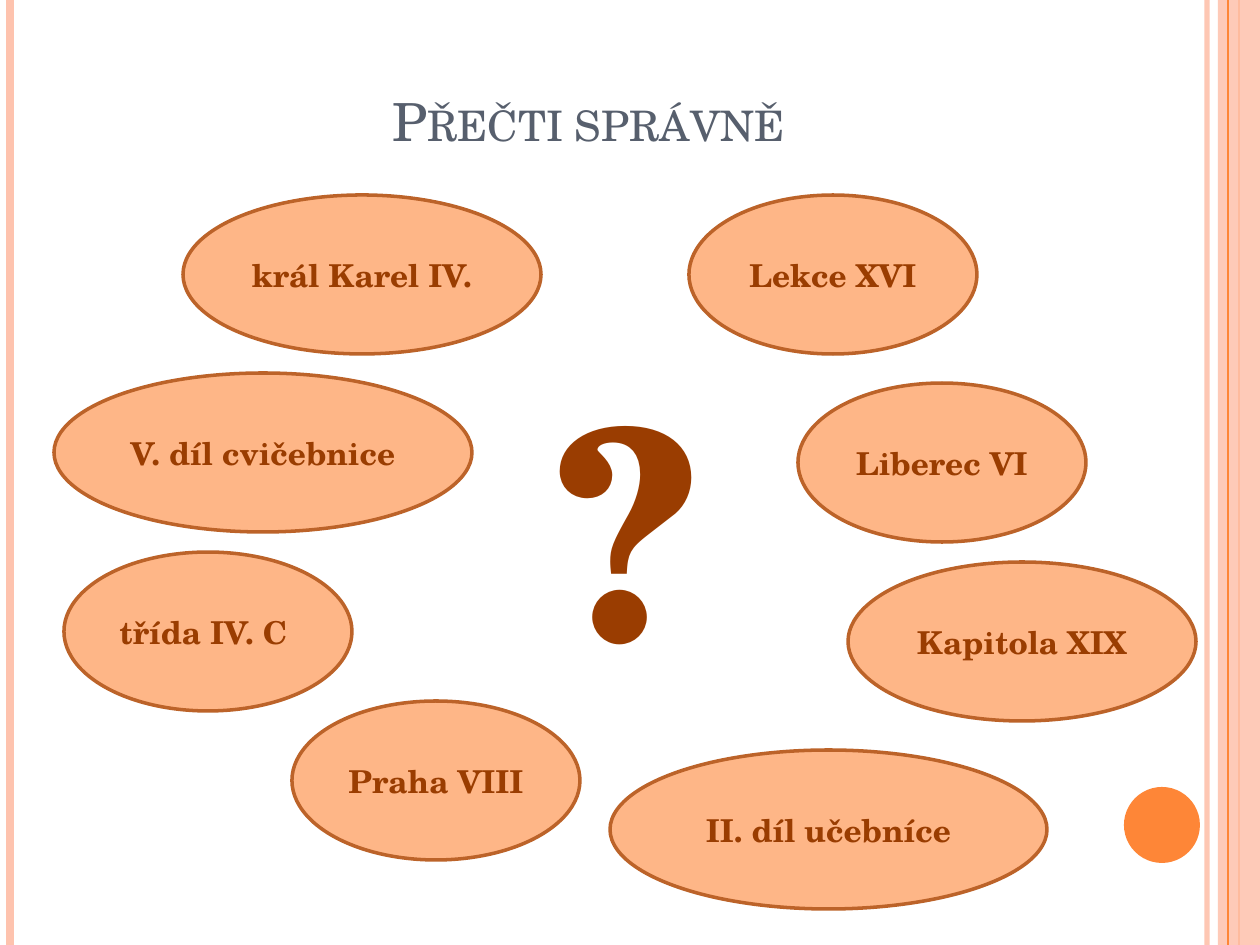
from lxml import etree
from pptx import Presentation
from pptx import util as u
from pptx.dml.color import RGBColor
from pptx.enum import shapes, text
from pptx.oxml.ns import qn

PX = 914400 / 126
FONT = "TeX Gyre Schola"
PINK = RGBColor(0xFE, 0xC3, 0xAE)
ORANGE = RGBColor(0xFE, 0x86, 0x37)
PEACH = RGBColor(0xFE, 0xB6, 0x87)
RUST = RGBColor(0xBC, 0x63, 0x29)
BROWN = RGBColor(0x9A, 0x3D, 0x01)
SLATE = RGBColor(0x57, 0x5F, 0x6D)
W, H = 1260, 945


def px(*lengths):
    return [u.Emu(round(n * PX)) for n in lengths]


def add_run(tf, words, size, color, bold=False):
    r = tf.paragraphs[0].add_run()
    r.text = words
    r.font.name = FONT
    r.font.size = u.Pt(size)
    r.font.color.rgb = color
    r.font.bold = bold
    return r


prs = Presentation()
prs.slide_width, prs.slide_height = px(W, H)
s = prs.slides.add_slide(prs.slide_layouts[6])

rules = [(1207, PINK, 3), (10, PINK, 4.5), (1239, ORANGE, 1.5), (1228, ORANGE, 0.75)]
lines = []
for x, color, width in rules:
    line = s.shapes.add_connector(shapes.MSO_CONNECTOR.STRAIGHT, *px(x, 0, x, H))
    line.line.color.rgb = color
    line.line.width = u.Pt(width)
    etree.SubElement(line._element.spPr, qn("a:effectLst"))
    lines.append(line)

band = s.shapes.add_shape(shapes.MSO_SHAPE.RECTANGLE, *px(1218, 0, 42, H))
dot = s.shapes.add_shape(shapes.MSO_SHAPE.OVAL, *px(1124, 787, 76, 76))
for sp, color in [(band, PINK), (dot, ORANGE)]:
    sp.shadow.inherit = False
    sp.fill.solid()
    sp.fill.fore_color.rgb = color
    sp.line.fill.background()
lines[-1]._element.addprevious(band._element)

for sp, alpha in [(lines[0], 93000), (band, 87000)]:
    clr = next(sp._element.spPr.iter(qn("a:srgbClr")))
    etree.SubElement(clr, qn("a:alpha")).set("val", str(alpha))

title = s.shapes.add_textbox(*px(74, 0, 1029, 158))
tf = title.text_frame
tf.word_wrap = True
tf.vertical_anchor = text.MSO_ANCHOR.BOTTOM
tf.paragraphs[0].alignment = text.PP_ALIGN.CENTER
r = add_run(tf, "Přečti správně", 30, SLATE)
r.font._element.set("cap", "small")

bubbles = [
    ("V. díl cvičebnice", 54, 373, 418),
    ("třída IV. C ", 64, 552, 288),
    ("král Karel IV.", 183, 195, 358),
    ("Praha VIII", 292, 701, 288),
    ("Liberec VI", 798, 383, 288),
    ("Kapitola XIX", 848, 562, 348),
    ("II. díl učebníce", 610, 750, 437),
    ("Lekce XVI", 689, 195, 288),
]
for words, x, y, width in bubbles:
    sp = s.shapes.add_shape(shapes.MSO_SHAPE.OVAL, *px(x, y, width, 159))
    sp.shadow.inherit = False
    sp.fill.solid()
    sp.fill.fore_color.rgb = PEACH
    sp.line.color.rgb = RUST
    sp.line.width = u.Pt(2)
    tf = sp.text_frame
    tf.word_wrap = True
    tf.vertical_anchor = text.MSO_ANCHOR.MIDDLE
    tf.paragraphs[0].alignment = text.PP_ALIGN.CENTER
    add_run(tf, words, 18, BROWN, True)

mark = s.shapes.add_textbox(*px(541, 344, 100, 364))
tf = mark.text_frame
tf.word_wrap = True
add_run(tf, "?", 166, BROWN, True)

prs.save("out.pptx")
